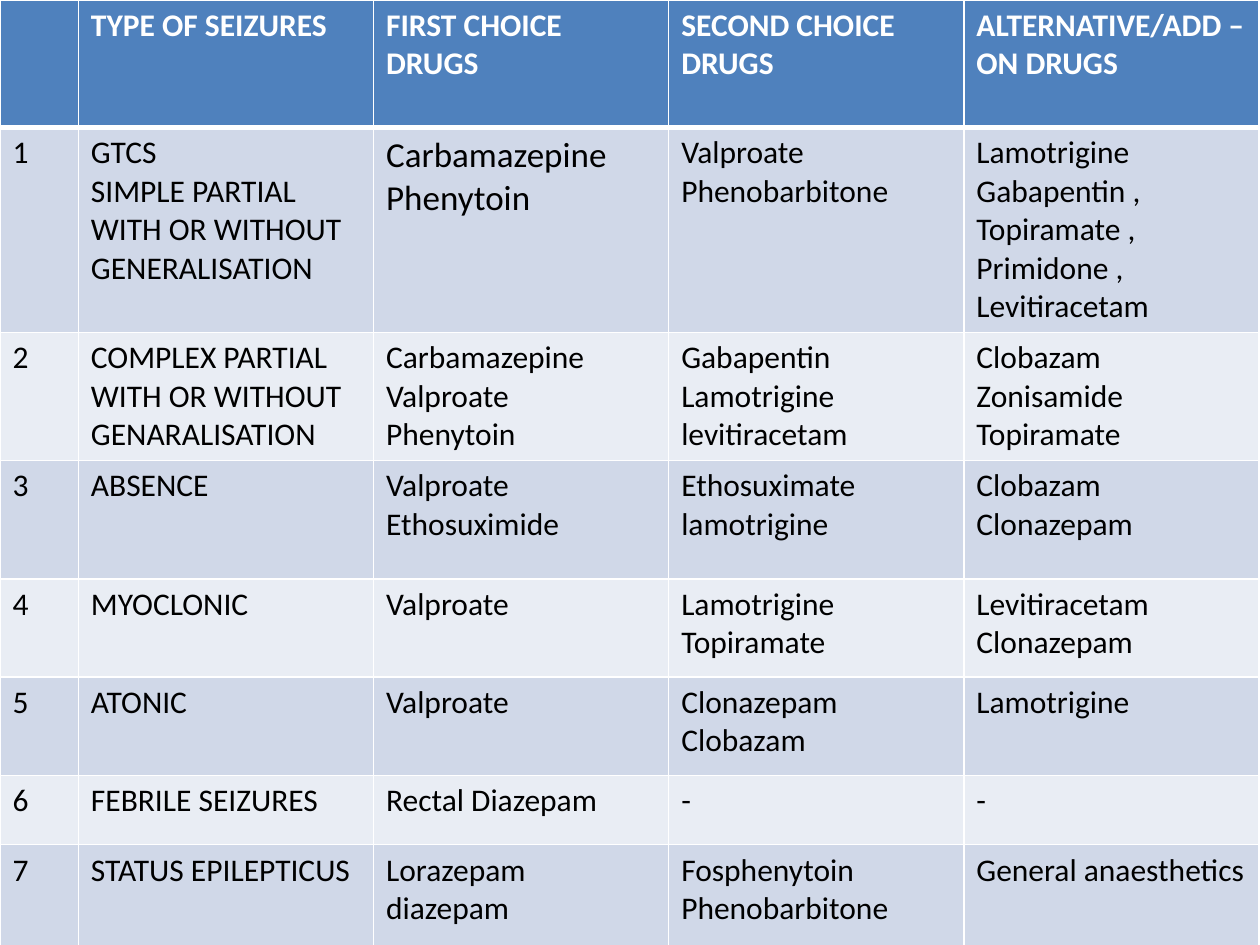
from lxml import etree
from pptx import Presentation
from pptx.dml.color import RGBColor
from pptx.oxml.ns import qn
from pptx.util import Cm, Pt

WHITE = RGBColor(0xFF, 0xFF, 0xFF)
BLACK = RGBColor(0x00, 0x00, 0x00)
BLUE = RGBColor(0x4F, 0x81, 0xBD)
BAND_DARK = RGBColor(0xD0, 0xD8, 0xE8)
BAND_LIGHT = RGBColor(0xE9, 0xED, 0xF4)

# One paragraph per line of a cell
ROWS = [
    ["", "TYPE OF SEIZURES", "FIRST CHOICE DRUGS", "SECOND CHOICE DRUGS",
     "ALTERNATIVE/ADD –ON DRUGS"],
    ["1", "GTCS\nSIMPLE PARTIAL WITH OR WITHOUT GENERALISATION",
     "Carbamazepine\nPhenytoin", "Valproate\nPhenobarbitone",
     "Lamotrigine\nGabapentin , Topiramate , Primidone , Levitiracetam"],
    ["2", "COMPLEX PARTIAL WITH OR WITHOUT GENARALISATION",
     "Carbamazepine\nValproate\nPhenytoin",
     "Gabapentin\nLamotrigine\nlevitiracetam",
     "Clobazam\nZonisamide\nTopiramate"],
    ["3", "ABSENCE", "Valproate\nEthosuximide", "Ethosuximate\nlamotrigine",
     "Clobazam\nClonazepam"],
    ["4", "MYOCLONIC", "Valproate", "Lamotrigine\nTopiramate",
     "Levitiracetam\nClonazepam"],
    ["5", "ATONIC", "Valproate", "Clonazepam\nClobazam", "Lamotrigine"],
    ["6", "FEBRILE SEIZURES", "Rectal Diazepam", "-", "-"],
    ["7", "STATUS EPILEPTICUS", "Lorazepam\ndiazepam",
     "Fosphenytoin\nPhenobarbitone", "General anaesthetics"],
]
COL_WIDTHS = [1.58] + [5.95] * 4
ROW_HEIGHTS = [2.57, 2.39, 2.39, 2.39, 1.98, 1.98, 1.4, 2.39]
LARGER_CELL = (1, 2)


def add_border(cell, side, width):
    ln = etree.SubElement(cell._tc.get_or_add_tcPr(), qn(f"a:ln{side}"), w=str(Pt(width)))
    fill = etree.SubElement(ln, qn("a:solidFill"))
    etree.SubElement(fill, qn("a:srgbClr"), val=str(WHITE))


prs = Presentation()
prs.slide_width, prs.slide_height = Cm(25.4), Cm(19.05)
slide = prs.slides.add_slide(prs.slide_layouts[6])

table = slide.shapes.add_table(len(ROWS), len(COL_WIDTHS), 0, 0, Cm(sum(COL_WIDTHS)),
                               Cm(sum(ROW_HEIGHTS))).table
for col, width in zip(table.columns, COL_WIDTHS):
    col.width = Cm(width)
for row, height in zip(table.rows, ROW_HEIGHTS):
    row.height = Cm(height)

for i, row in enumerate(ROWS):
    header = i == 0
    for j, content in enumerate(row):
        cell = table.cell(i, j)
        for side in "LRTB":
            thick = (header and side == "B") or (i == 1 and side == "T")
            add_border(cell, side, 3 if thick else 1)
        cell.fill.solid()
        cell.fill.fore_color.rgb = BLUE if header else BAND_DARK if i % 2 else BAND_LIGHT
        if not content:
            continue
        tf = cell.text_frame
        for k, line in enumerate(content.split("\n")):
            p = tf.add_paragraph() if k else tf.paragraphs[0]
            r = p.add_run()
            r.text = line
            r.font.name = "Calibri"
            r.font.size = Pt(20 if (i, j) == LARGER_CELL else 18)
            r.font.bold = header
            r.font.color.rgb = WHITE if header else BLACK

prs.save("out.pptx")
